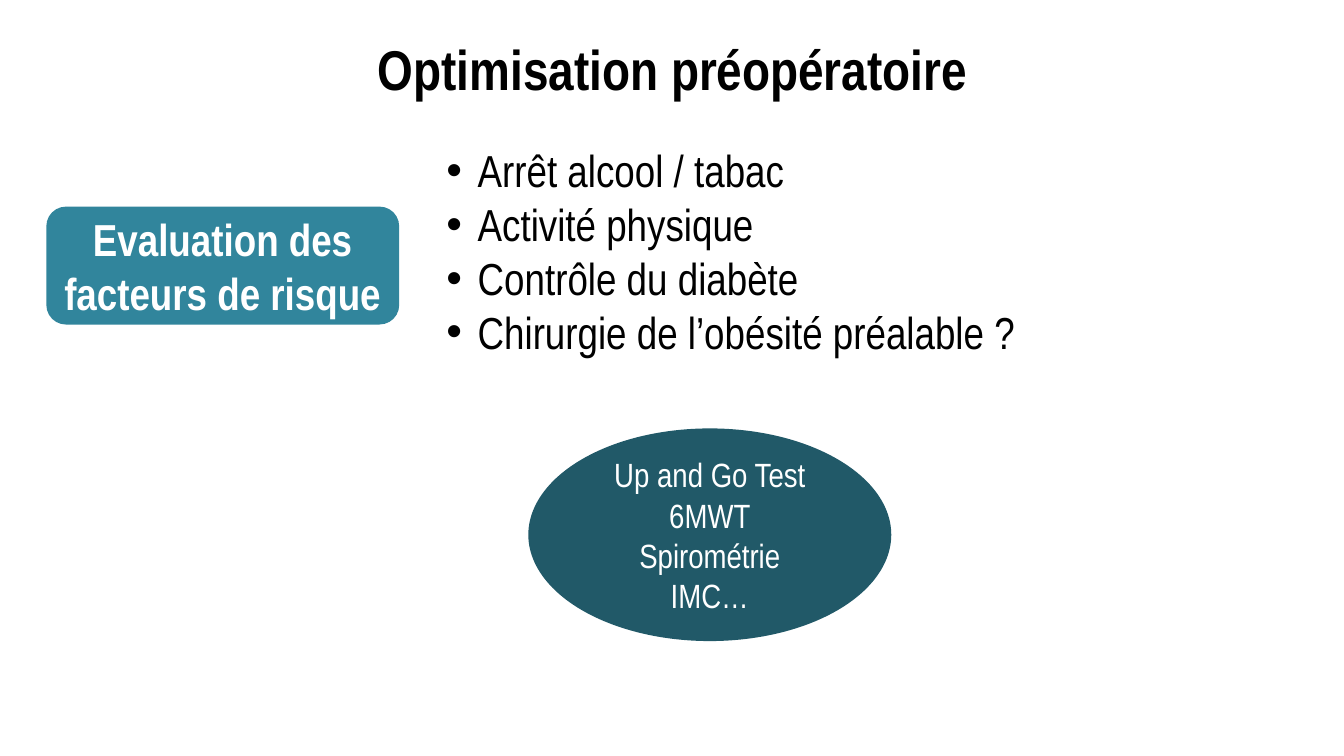
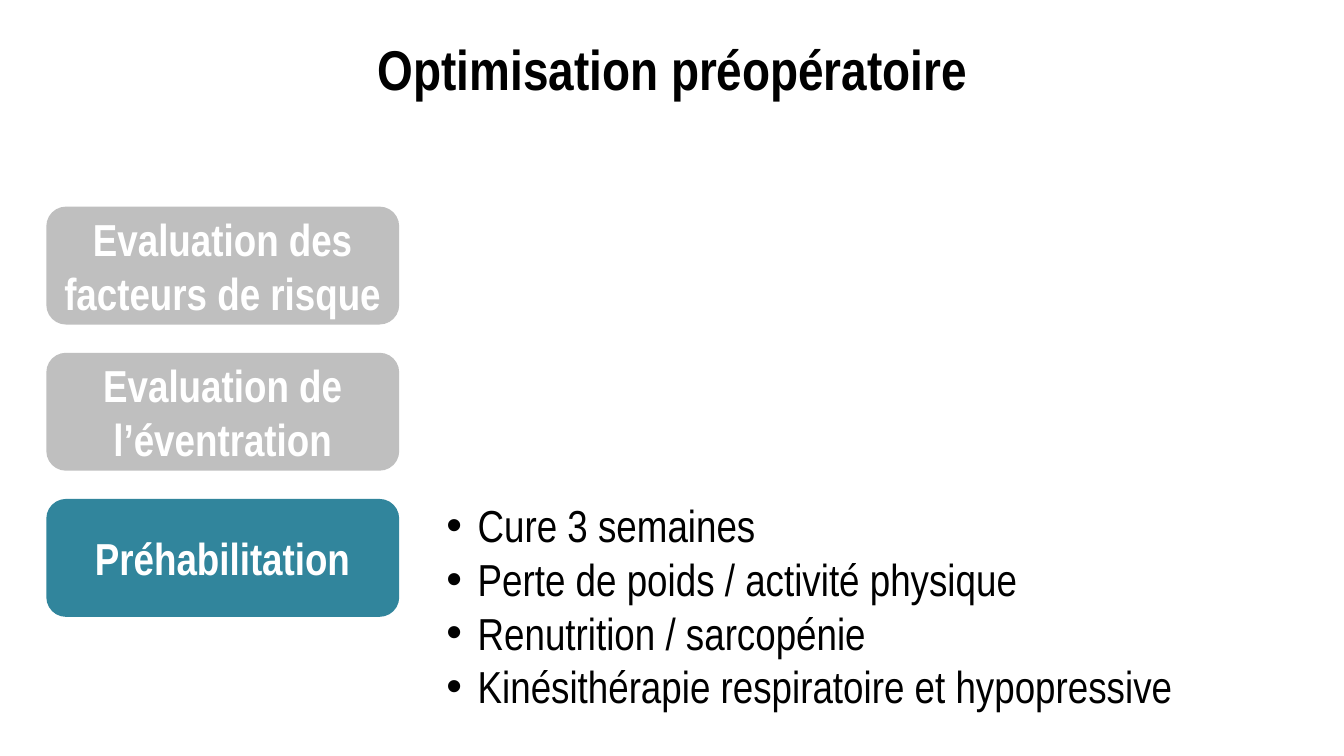
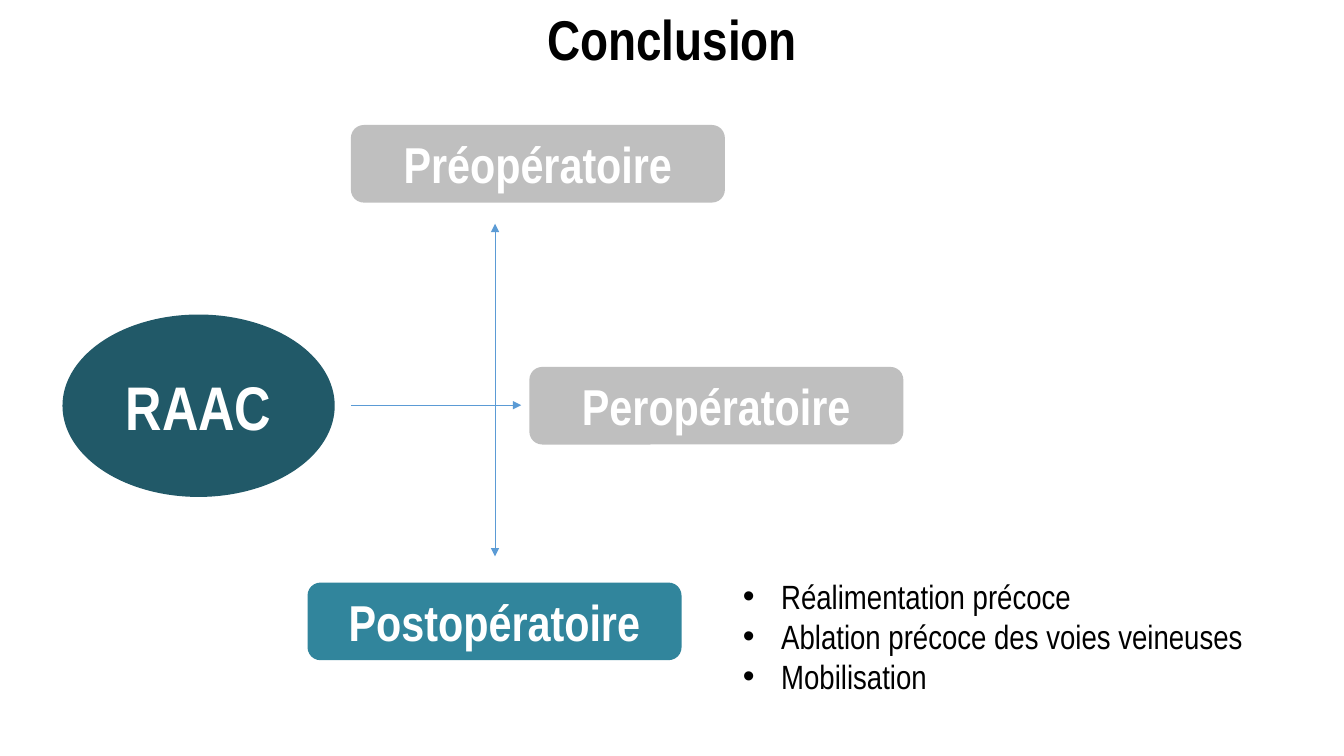
"""Build three slides on preoperative optimisation and enhanced recovery."""
from dataclasses import dataclass

from lxml.etree import SubElement
from pptx import Presentation
from pptx.dml.color import RGBColor
from pptx.enum.shapes import MSO_CONNECTOR as Connector, MSO_SHAPE as Shape
from pptx.enum.text import MSO_ANCHOR as Anchor, MSO_AUTO_SIZE as AutoSize, PP_ALIGN as Align
from pptx.oxml.ns import qn
from pptx.util import Inches, Pt


@dataclass(frozen=True)
class Theme:
    font: str = "Arial Narrow"
    ink: str = "000000"
    white: str = "FFFFFF"
    active: str = "31859C"
    muted: str = "BFBFBF"
    dark: str = "215968"
    arrow: str = "5B9BD5"
    title: int = 40
    body: int = 32
    small: int = 24
    phase: int = 36
    hub: int = 44
    line: float = 0.5


THEME = Theme()

TITLE = "Optimisation préopératoire"
TITLE_BOX = (1.67, 0.29, 10, 0.77)
STEPS = ["Evaluation des facteurs de risque", "Evaluation de l’éventration", "Préhabilitation"]
STEP_LEFT, STEP_TOP, STEP_PITCH = 0.46, 2.05, 1.45
STEP_SIZE = (3.5, 1.17)
RISK_ACTIONS = ["Arrêt alcool / tabac", "Activité physique", "Contrôle du diabète",
                "Chirurgie de l’obésité préalable ?"]
TESTS = ["Up and Go Test", "6MWT", "Spirométrie", "IMC…"]
PREHABILITATION = ["Cure 3 semaines", "Perte de poids / activité physique",
                   "Renutrition / sarcopénie", "Kinésithérapie respiratoire et hypopressive"]

PHASES = [("Préopératoire", 3.48, 1.24, THEME.muted),
          ("Peropératoire", 5.25, 3.64, THEME.muted),
          ("Postopératoire", 3.05, 5.78, THEME.active)]
PHASE_SIZE = (3.71, 0.77)
RECOVERY = ["Réalimentation précoce", "Ablation précoce des voies veineuses", "Mobilisation"]
CROSSING = (4.91, 4.02)
ARROWS = [(CROSSING, (4.91, 2.22), True),
          ((3.48, 4.02), CROSSING, False),
          (CROSSING, (5.17, 4.02), True),
          (CROSSING, (4.91, 5.52), True)]


def rgb(code):
    return RGBColor.from_string(code)


def write(frame, lines, size, color=THEME.ink, bold=False, align=Align.LEFT, indent=None):
    frame.word_wrap = True
    for index, line in enumerate(lines):
        para = frame.paragraphs[0] if index == 0 else frame.add_paragraph()
        para.alignment = align
        if indent:
            properties = para._p.get_or_add_pPr()
            properties.set("marL", str(Inches(indent)))
            properties.set("indent", str(-Inches(indent)))
            SubElement(properties, qn("a:buFont")).set("typeface", "Arial")
            SubElement(properties, qn("a:buChar")).set("char", "•")
        span = para.add_run()
        span.text = line
        span.font.name = THEME.font
        span.font.size = Pt(size)
        span.font.bold = bold
        span.font.color.rgb = rgb(color)


def add_text(page, bounds, lines, size, **style):
    box = page.shapes.add_textbox(*map(Inches, bounds))
    write(box.text_frame, lines, size, **style)
    box.text_frame.auto_size = AutoSize.SHAPE_TO_FIT_TEXT


def add_title(page, text, bounds=TITLE_BOX):
    add_text(page, bounds, [text], THEME.title, bold=True, align=Align.CENTER)


def add_label(page, kind, bounds, lines, size, fill, bold=True):
    label = page.shapes.add_shape(kind, *map(Inches, bounds))
    label.shadow.inherit = False
    label.fill.solid()
    label.fill.fore_color.rgb = rgb(fill)
    label.line.fill.background()
    label.text_frame.vertical_anchor = Anchor.MIDDLE
    write(label.text_frame, lines, size, color=THEME.white, bold=bold, align=Align.CENTER)


def add_steps(page, count):
    for index, step in enumerate(STEPS[:count]):
        fill = THEME.active if index == count - 1 else THEME.muted
        bounds = (STEP_LEFT, STEP_TOP + index * STEP_PITCH, *STEP_SIZE)
        add_label(page, Shape.ROUNDED_RECTANGLE, bounds, [step], THEME.body, fill)


def add_arrow(page, start, end, pointed):
    arrow = page.shapes.add_connector(Connector.STRAIGHT, *map(Inches, start + end))
    arrow.line.color.rgb = rgb(THEME.arrow)
    arrow.line.width = Pt(THEME.line)
    if pointed:
        SubElement(arrow.line._get_or_add_ln(), qn("a:tailEnd")).set("type", "triangle")
    SubElement(arrow._element.spPr, qn("a:effectLst"))


def build_risk_factors(page):
    add_steps(page, 1)
    add_text(page, (4.33, 1.37, 6.07, 2.26), RISK_ACTIONS, THEME.body, indent=0.31)
    add_title(page, TITLE)
    add_label(page, Shape.OVAL, (5.24, 4.25, 3.6, 2.11), TESTS, THEME.small, THEME.dark, bold=False)


def build_prehabilitation(page):
    add_steps(page, 3)
    add_text(page, (4.33, 4.89, 8.76, 2.26), PREHABILITATION, THEME.body, indent=0.31)
    add_title(page, TITLE)


def build_conclusion(page):
    add_title(page, "Conclusion", (0, 0, 13.33, 0.77))
    add_label(page, Shape.OVAL, (0.62, 3.12, 2.7, 1.81), ["RAAC"], THEME.hub, THEME.dark)
    for start, end, pointed in ARROWS:
        add_arrow(page, start, end, pointed)
    for name, left, top, fill in PHASES:
        add_label(page, Shape.ROUNDED_RECTANGLE, (left, top, *PHASE_SIZE), [name], THEME.phase, fill)
    add_text(page, (7.27, 5.66, 6.06, 1.31), RECOVERY, THEME.small, indent=0.38)


def main():
    deck = Presentation()
    deck.slide_width, deck.slide_height = Inches(13.33), Inches(7.5)
    for build in (build_risk_factors, build_prehabilitation, build_conclusion):
        build(deck.slides.add_slide(deck.slide_layouts[6]))
    deck.save("out.pptx")


if __name__ == "__main__":
    main()
